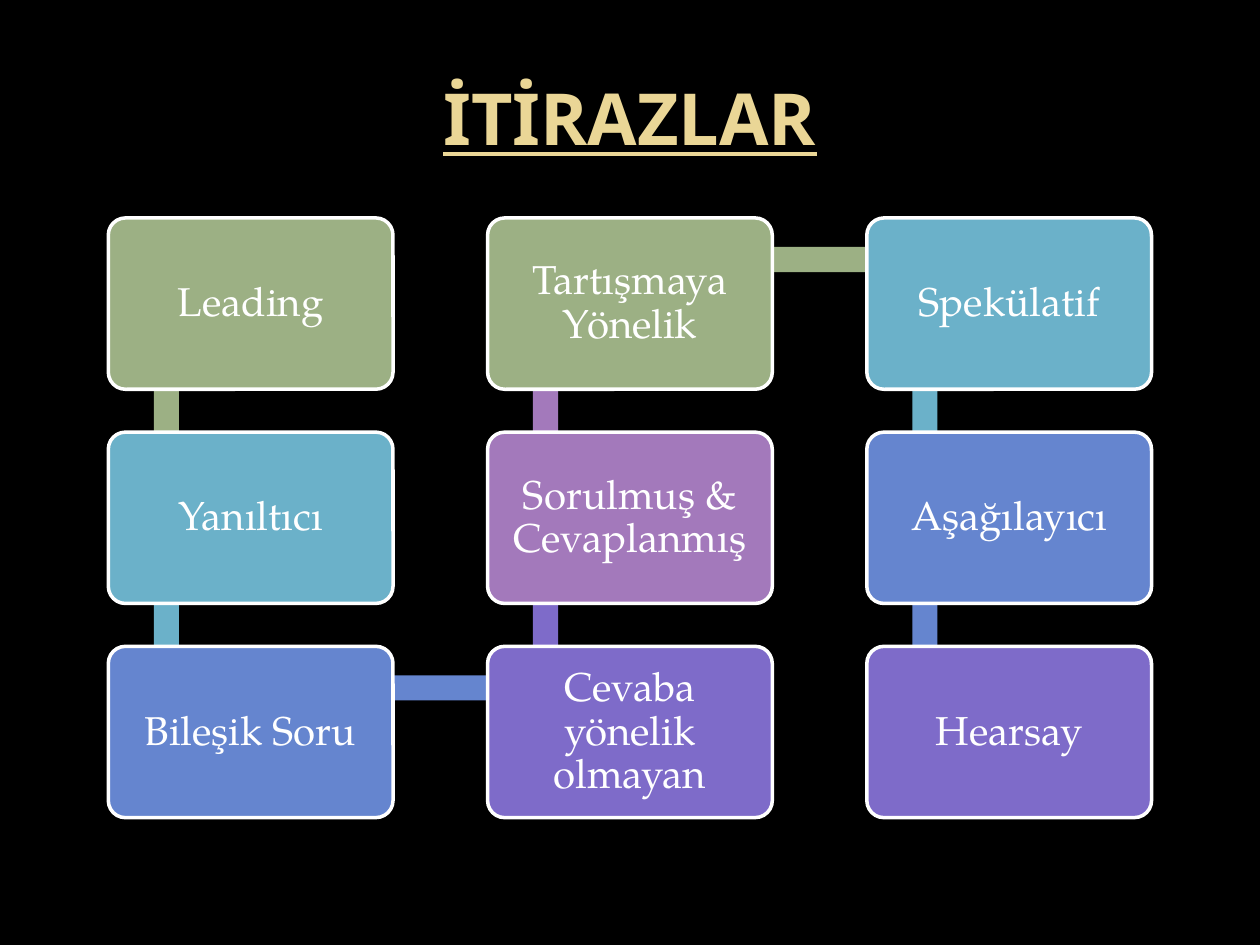
from dataclasses import dataclass
from itertools import cycle

from pptx import Presentation
from pptx.dml.color import RGBColor
from pptx.enum.shapes import MSO_SHAPE
from pptx.enum.text import MSO_ANCHOR, PP_ALIGN
from pptx.util import Inches, Pt


@dataclass(frozen=True)
class Theme:
    background: str = "000000"
    title: str = "EAD696"
    text: str = "FFFFFF"
    accents: tuple = ("9CB084", "6BB1C9", "6585CF", "7E6BC9", "A379BB")
    title_font: str = "Noto Sans"
    body_font: str = "TeX Gyre Pagella"
    title_size: int = 41
    body_size: int = 23
    outline: int = 2


class ObjectionSlide:
    LEFT, TOP = 0.86, 1.73
    COLUMN, ROW = 3.01, 1.7
    BOX_WIDTH, BOX_HEIGHT = 2.26, 1.36
    JOINT_X, JOINT_Y, BAR = 0.46, 0.33, 0.2

    def __init__(self, prs, theme):
        self.theme = theme
        self.s = prs.slides.add_slide(prs.slide_layouts[6])
        fill = self.s.background.fill
        fill.solid()
        fill.fore_color.rgb = RGBColor.from_string(theme.background)

    def corner(self, cell):
        column, row = cell
        return self.LEFT + column * self.COLUMN, self.TOP + row * self.ROW

    def add_text(self, sp, text, font, size, color):
        tf = sp.text_frame
        tf.word_wrap = True
        tf.vertical_anchor = MSO_ANCHOR.MIDDLE
        p = tf.paragraphs[0]
        p.alignment = PP_ALIGN.CENTER
        r = p.add_run()
        r.text = text
        r.font.name = font
        r.font.size = Pt(size)
        r.font.color.rgb = RGBColor.from_string(color)
        return p, r

    def shape(self, kind, x, y, width, height, color):
        sp = self.s.shapes.add_shape(kind, *map(Inches, (x, y, width, height)))
        sp.shadow.inherit = False
        sp.fill.solid()
        sp.fill.fore_color.rgb = RGBColor.from_string(color)
        sp.line.fill.background()
        return sp

    def title(self, text):
        t = self.theme
        sp = self.s.shapes.add_textbox(*map(Inches, (0.5, 0.3, 9, 1.25)))
        _, r = self.add_text(sp, text, t.title_font, t.title_size, t.title)
        r.font.bold = True
        r.font.underline = True

    def bar(self, start, end, color):
        (x1, y1), (x2, y2) = self.corner(start), self.corner(end)
        length = abs(x2 - x1) + abs(y2 - y1)
        x = (x1 + x2 - length) / 2 + self.JOINT_X
        y = (y1 + y2 - self.BAR) / 2 + self.JOINT_Y
        sp = self.shape(MSO_SHAPE.RECTANGLE, x, y, length, self.BAR, color)
        sp.rotation = 90 * (end[1] - start[1]) % 360

    def box(self, cell, text, color):
        t = self.theme
        sp = self.shape(MSO_SHAPE.ROUNDED_RECTANGLE, *self.corner(cell),
                        self.BOX_WIDTH, self.BOX_HEIGHT, color)
        sp.adjustments[0] = 0.1
        sp.line.color.rgb = RGBColor.from_string(t.text)
        sp.line.width = Pt(t.outline)
        tf = sp.text_frame
        tf.margin_left = tf.margin_right = Inches(0.1)
        tf.margin_top = tf.margin_bottom = Inches(0.1)
        p, _ = self.add_text(sp, text, t.body_font, t.body_size, t.text)
        p.line_spacing = 0.9

    def snake(self, labels, rows=3):
        cells = []
        for i in range(len(labels)):
            column, row = divmod(i, rows)
            cells.append((column, rows - 1 - row if column % 2 else row))
        following = cells[1:] + [None]
        for cell, after, label, color in zip(
                cells, following, labels, cycle(self.theme.accents)):
            if after:
                self.bar(cell, after, color)
            self.box(cell, label, color)


def main():
    prs = Presentation()
    prs.slide_width, prs.slide_height = Inches(10), Inches(7.5)
    slide = ObjectionSlide(prs, Theme())
    slide.title("İTİRAZLAR")
    slide.snake([
        "Leading", "Yanıltıcı", "Bileşik Soru",
        "Cevaba yönelik olmayan", "Sorulmuş & Cevaplanmış", "Tartışmaya Yönelik",
        "Spekülatif", "Aşağılayıcı", "Hearsay",
    ])
    prs.save("out.pptx")


if __name__ == "__main__":
    main()
